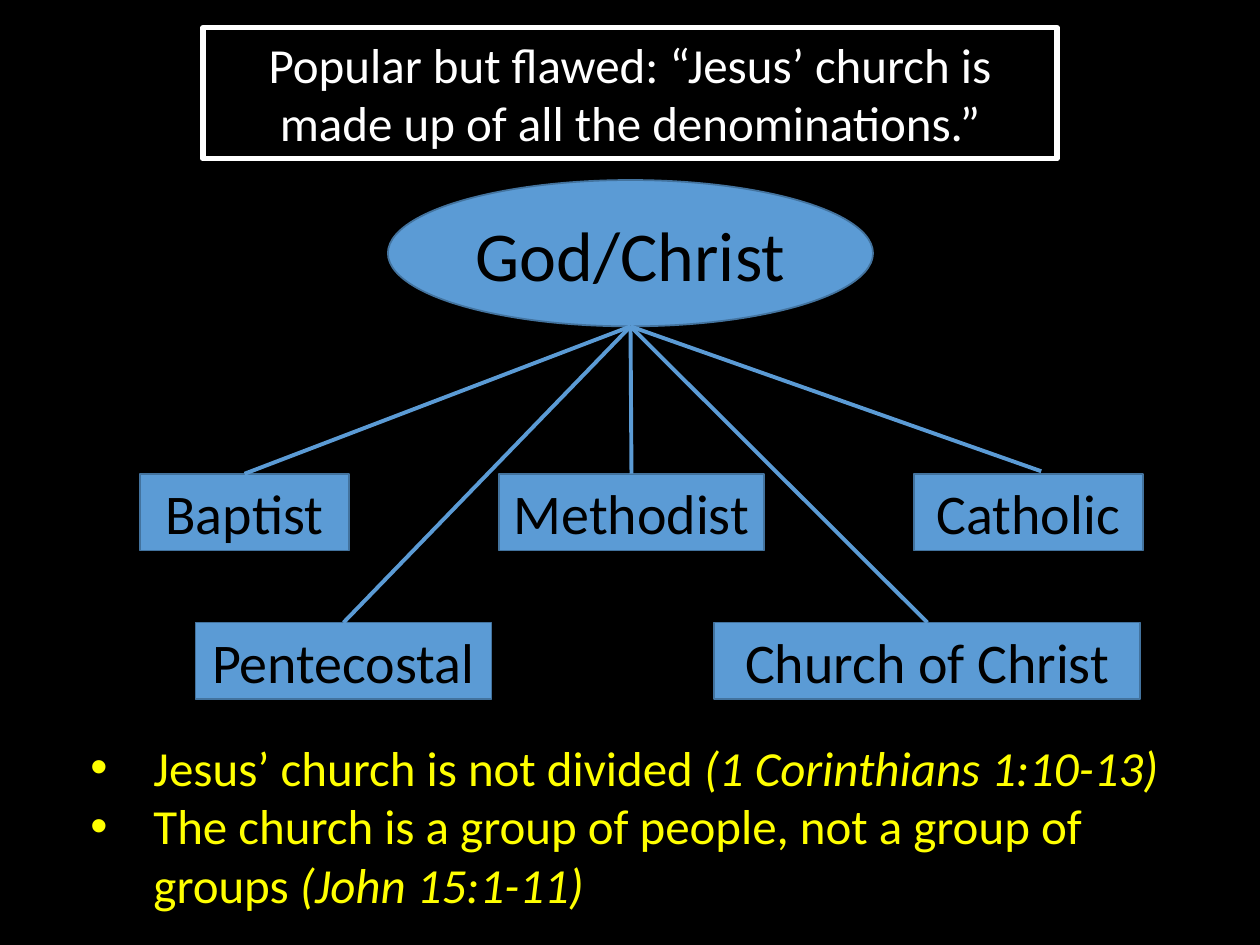
"""Build a slide on the popular view of Jesus' church and the denominations."""
from lxml.etree import SubElement
from pptx import Presentation
from pptx.dml.color import RGBColor
from pptx.enum.shapes import MSO_CONNECTOR as Connector, MSO_SHAPE as Shape
from pptx.enum.text import MSO_ANCHOR as Anchor, MSO_AUTO_SIZE as AutoSize, PP_ALIGN as Align
from pptx.oxml.ns import qn
from pptx.util import Cm, Pt

COLORS = {"black": "000000", "white": "FFFFFF", "blue": "5B9BD5", "edge": "43739E", "yellow": "FFFF00"}
FRAME = {"word_wrap": True, "auto_size": AutoSize.NONE}
INDENT = Cm(1.27)
BOX_HEIGHT = 1.55
UPPER_ROW, LOWER_ROW = 9.55, 12.55
GOD = (7.82, 3.63, 9.78, 2.95)
DENOMINATIONS = [
    ("Baptist", 2.82, UPPER_ROW, 4.22, (0, 0)),
    ("Methodist", 10.06, UPPER_ROW, 5.34, (0, 0)),
    ("Catholic", 18.42, UPPER_ROW, 4.62, (0.26, -0.05)),
    ("Church of Christ", 14.4, LOWER_ROW, 8.59, (0, 0)),
    ("Pentecostal", 3.94, LOWER_ROW, 5.97, (0, 0)),
]
POINTS = [
    ("Jesus’ church is not divided ", "(1 Corinthians 1:10-13)"),
    ("The church is a group of people, not a group of groups ", "(John 15:1-11)"),
]


def color(name):
    return RGBColor.from_string(COLORS[name])


def apply(target, values):
    for name, value in values.items():
        setattr(target, name, value)


def place(shape, left, top, width, height):
    apply(shape, {"left": Cm(left), "top": Cm(top), "width": Cm(width), "height": Cm(height)})


def style_line(line, name, width):
    line.color.rgb = color(name)
    line.width = Pt(width)


def add_run(paragraph, text, size, name, italic=False):
    run = paragraph.add_run()
    run.text = text
    apply(run.font, {"name": "Calibri", "size": Pt(size), "italic": italic})
    run.font.color.rgb = color(name)


def fill_title(title):
    place(title, 4.09, 0.56, 17.22, 2.64)
    style_line(title.line, "white", 3)
    apply(title.text_frame, {**FRAME, "vertical_anchor": Anchor.TOP})
    paragraph = title.text_frame.paragraphs[0]
    paragraph.alignment = Align.CENTER
    add_run(paragraph, "Popular but flawed: “Jesus’ church is made up of all the denominations.”", 28, "white")


def add_bullet(paragraph):
    properties = paragraph._p.get_or_add_pPr()
    properties.set("marL", str(INDENT))
    properties.set("indent", str(-INDENT))
    SubElement(properties, qn("a:buFont"), typeface="Arial")
    SubElement(properties, qn("a:buChar"), char="•")


def fill_points(body):
    place(body, 1.57, 14.73, 22.3, 3.84)
    frame = body.text_frame
    apply(frame, {**FRAME, "vertical_anchor": Anchor.TOP})
    for index, (statement, reference) in enumerate(POINTS):
        paragraph = frame.add_paragraph() if index else frame.paragraphs[0]
        add_bullet(paragraph)
        paragraph.space_before = Pt(0)
        add_run(paragraph, statement, 28, "yellow")
        add_run(paragraph, reference, 28, "yellow", italic=True)


def add_node(slide, kind, text, box, size):
    node = slide.shapes.add_shape(kind, *map(Cm, box))
    node.shadow.inherit = False
    node.fill.solid()
    node.fill.fore_color.rgb = color("blue")
    style_line(node.line, "edge", 1)
    apply(node.text_frame, {**FRAME, "vertical_anchor": Anchor.MIDDLE})
    paragraph = node.text_frame.paragraphs[0]
    paragraph.alignment = Align.CENTER
    add_run(paragraph, text, size, "black")
    return node


def add_branch(slide, parent, child, shift):
    start = parent.left + parent.width // 2, parent.top + parent.height
    end = child.left + child.width // 2 + Cm(shift[0]), child.top + Cm(shift[1])
    branch = slide.shapes.add_connector(Connector.STRAIGHT, *start, *end)
    style_line(branch.line, "blue", 2.25)
    SubElement(branch._element.spPr, qn("a:effectLst"))


def main():
    presentation = Presentation()
    apply(presentation, {"slide_width": Cm(25.4), "slide_height": Cm(19.05)})
    slide = presentation.slides.add_slide(presentation.slide_layouts[1])
    slide.background.fill.solid()
    slide.background.fill.fore_color.rgb = color("black")
    fill_title(slide.shapes.title)
    fill_points(slide.placeholders[1])
    god = add_node(slide, Shape.OVAL, "God/Christ", GOD, 40)
    for name, left, top, width, shift in DENOMINATIONS:
        box = (left, top, width, BOX_HEIGHT)
        node = add_node(slide, Shape.RECTANGLE, name, box, 32)
        add_branch(slide, god, node, shift)
    presentation.save("out.pptx")


if __name__ == "__main__":
    main()
